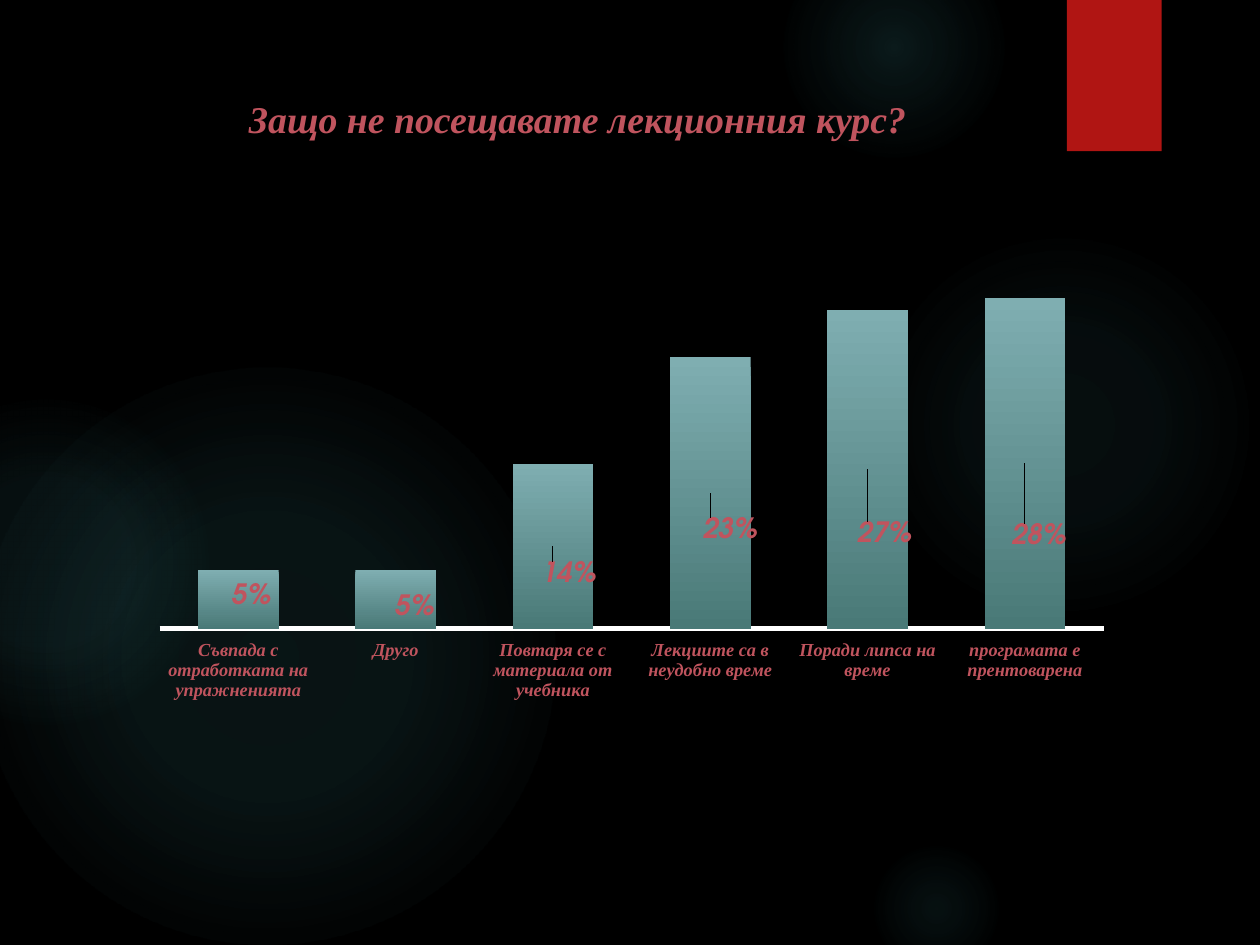
from lxml.etree import SubElement
from pptx import Presentation
from pptx.chart.data import CategoryChartData
from pptx.dml.color import RGBColor
from pptx.enum.chart import XL_CHART_TYPE, XL_LABEL_POSITION, XL_TICK_LABEL_POSITION, XL_TICK_MARK
from pptx.enum.shapes import MSO_SHAPE
from pptx.enum.text import MSO_ANCHOR, PP_ALIGN
from pptx.oxml import parse_xml
from pptx.oxml.ns import nsdecls, qn
from pptx.util import Cm, Pt

COLORS = {
    "back": "000000",
    "glow": "50B9C1",
    "tab": "B01513",
    "text": "C0545E",
    "axis": "FFFFFF",
    "bar_top": "7FAEB1",
    "bar_bottom": "497977",
}
SERIF = "Times New Roman"
SANS = "TeX Gyre Adventor"

GLOWS = [
    (17.5, 4.65, 7.82, [(0, 7), (36, 6), (69, 0)]),
    (15.8, -1.27, 4.45, [(0, 14), (36, 7), (73, 0)]),
    (17.5, 16.94, 2.74, [(0, 9), (36, 5), (66, 0)]),
    (-0.43, 7.42, 11.63, [(0, 11), (36, 10), (75, 0)]),
    (-2.34, 8.05, 6.55, [(0, 8), (36, 8), (72, 0)]),
]
REASONS = [
    ("Съвпада с отработката на упражненията", 0.05, (0.26, -0.05)),
    ("Друго", 0.05, (0.38, 0.17)),
    ("Повтаря се с материала от учебника", 0.14, (0.32, 0.58)),
    ("Лекциите са в неудобно време", 0.23, (0.4, 0.75)),
    ("Поради липса на време", 0.27, (0.34, 1.32)),
    ("програмата е прентоварена", 0.28, (0.28, 1.48)),
]


def rgb(name):
    return RGBColor.from_string(COLORS[name])


def set_font(font, name, size):
    font.name, font.size = name, Pt(size)
    font.bold = font.italic = True
    font.color.rgb = rgb("text")


def add_plain(s, kind, x, y, w, h):
    sp = s.shapes.add_shape(kind, Cm(x), Cm(y), Cm(w), Cm(h))
    sp.shadow.inherit = False
    sp.line.fill.background()
    return sp


def radial_fill(sp, stops):
    gs = "".join(
        f'<a:gs pos="{pos * 1000}"><a:srgbClr val="{COLORS["glow"]}">'
        f'<a:alpha val="{alpha * 1000}"/></a:srgbClr></a:gs>'
        for pos, alpha in stops
    )
    sp._element.spPr.find(qn("a:prstGeom")).addnext(parse_xml(
        f'<a:gradFill {nsdecls("a")} rotWithShape="1"><a:gsLst>{gs}</a:gsLst>'
        '<a:path path="circle"><a:fillToRect l="50000" t="50000" r="50000" b="50000"/>'
        '</a:path></a:gradFill>'
    ))


def add_backdrop(s, x, y):
    s.background.fill.solid()
    s.background.fill.fore_color.rgb = rgb("back")
    for dx, dy, size, stops in GLOWS:
        radial_fill(add_plain(s, MSO_SHAPE.OVAL, x + dx, y + dy, size, size), stops)
    tab = add_plain(s, MSO_SHAPE.RECTANGLE, x + 21.51, y, 1.91, 3.05)
    tab.fill.solid()
    tab.fill.fore_color.rgb = rgb("tab")


def add_title(s, x, y, w, h):
    sp = s.shapes.title
    sp.left, sp.top, sp.width, sp.height = Cm(x), Cm(y), Cm(w), Cm(h)
    sp._element.getparent().append(sp._element)
    tf = sp.text_frame
    tf.word_wrap = True
    tf.vertical_anchor = MSO_ANCHOR.TOP
    tf.margin_top = Cm(0.2)
    p = tf.paragraphs[0]
    p.alignment = PP_ALIGN.CENTER
    r = p.add_run()
    r.text = "Защо не посещавате лекционния курс?"
    set_font(r.font, SERIF, 21.6)


def manual_layout(**parts):
    layout = parse_xml(f'<c:layout {nsdecls("c")}/>')
    manual = SubElement(layout, qn("c:manualLayout"))
    for tag, val in parts.items():
        SubElement(manual, qn(f"c:{tag}")).set("val", str(val))
    return layout


def place_plot(chart):
    area = chart._chartSpace.chart.plotArea
    for old in area.findall(qn("c:layout")):
        area.remove(old)
    area.insert(0, manual_layout(
        layoutTarget="inner", xMode="edge", yMode="edge", x=0.037, y=0.019, w=0.963, h=0.646))


def format_axes(chart):
    val = chart.value_axis
    val.minimum_scale, val.maximum_scale = 0, 0.3
    val.has_major_gridlines = False
    val.visible = False
    cat = chart.category_axis
    cat.major_tick_mark = cat.minor_tick_mark = XL_TICK_MARK.NONE
    cat.tick_label_position = XL_TICK_LABEL_POSITION.LOW
    cat.format.line.width = Pt(3)
    cat.format.line.color.rgb = rgb("axis")
    set_font(cat.tick_labels.font, SERIF, 10.5)


def format_bars(plot, w, h):
    plot.gap_width, plot.overlap = 95, 100
    plot.vary_by_categories = False
    series = plot.series[0]
    fill = series.format.fill
    fill.gradient()
    fill.gradient_angle = 270
    for stop, name in zip(fill.gradient_stops, ("bar_top", "bar_bottom")):
        stop.color.rgb = rgb(name)
    labels = series.data_labels
    labels.show_value = True
    labels.number_format, labels.number_format_is_linked = "0%", False
    set_font(labels.font, SANS, 16)
    for i, (_, _, (dx, dy)) in enumerate(REASONS):
        label = series.points[i].data_label
        set_font(label.font, SANS, 16)
        label.position = XL_LABEL_POSITION.CENTER
        d_lbl = labels._element.findall(qn("c:dLbl"))[i]
        d_lbl.find(qn("c:idx")).addnext(manual_layout(x=dx / w, y=dy / h))


def add_reasons_chart(s, x, y, w, h):
    data = CategoryChartData(number_format="0%")
    data.categories = [name for name, _, _ in REASONS]
    data.add_series("Series 1", [share for _, share, _ in REASONS])
    chart = s.shapes.add_chart(
        XL_CHART_TYPE.COLUMN_STACKED, Cm(x), Cm(y), Cm(w), Cm(h), data).chart
    chart.has_legend = chart.has_title = False
    chart.font.name, chart.font.size = SANS, Pt(18)
    chart.font.color.rgb = rgb("axis")
    place_plot(chart)
    format_axes(chart)
    format_bars(chart.plots[0], w, h)


def main():
    prs = Presentation()
    prs.slide_width, prs.slide_height = Cm(25.4), Cm(19.05)
    s = prs.slides.add_slide(prs.slide_layouts[5])
    add_backdrop(s, 0, 0)
    add_title(s, 1.27, 1.73, 20.75, 2.21)
    add_reasons_chart(s, 2.49, 5.33, 19.81, 11.05)
    prs.save("out.pptx")


if __name__ == "__main__":
    main()
